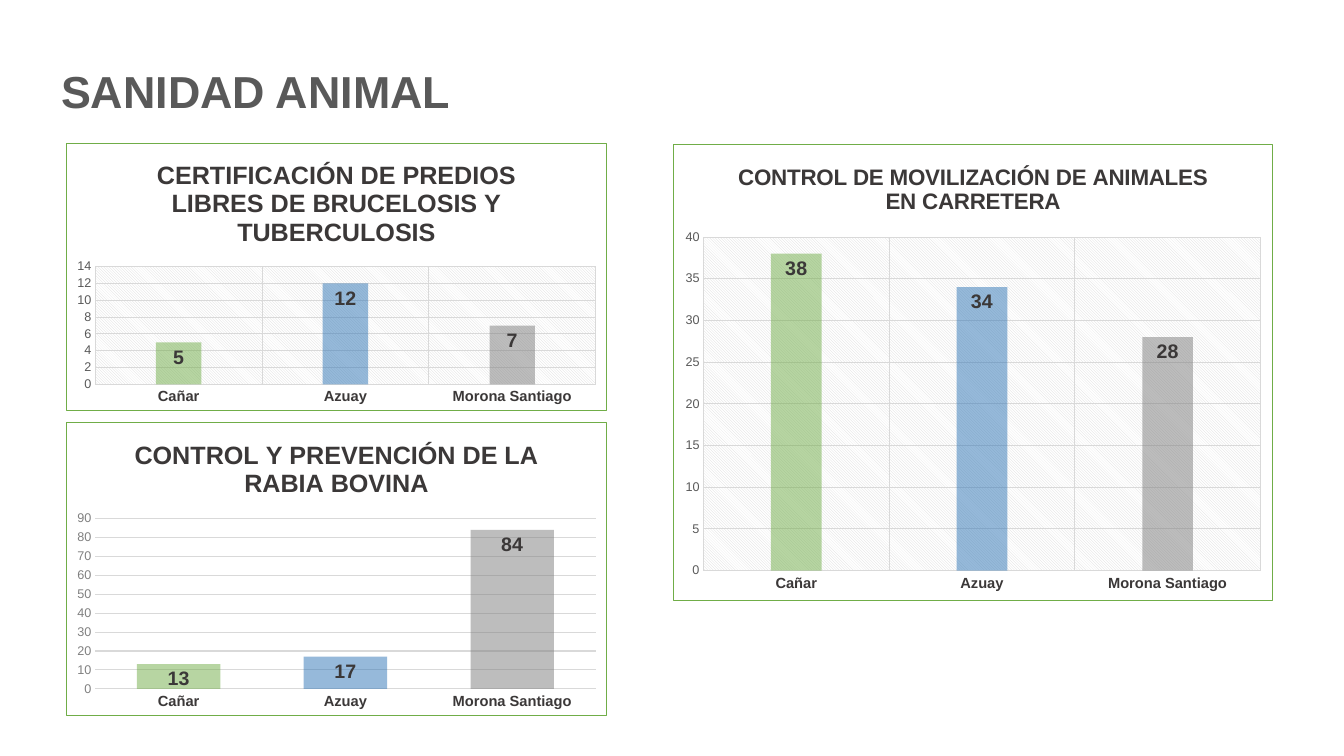
import pptx
import pptx.chart.data
import pptx.dml.color
import pptx.enum.chart
import pptx.enum.text
import pptx.oxml
import pptx.oxml.ns
import pptx.util

PX = 914400 / 100.8
FONT = "Arial"
COLORS = {
    "title": "595959",
    "dark": "3B3838",
    "tick": "595959",
    "light tick": "808080",
    "grid": "D9D9D9",
    "border": "70AD47",
    "white": "FFFFFF",
}
PROVINCES = {"Cañar": "70AD47", "Azuay": "2E75B6", "Morona Santiago": "7C7C7C"}
OPACITY = 50
NAMESPACE = pptx.oxml.ns.nsdecls("c", "a")


def px(length):
    return pptx.util.Emu(round(length * PX))


def rgb(name):
    return pptx.dml.color.RGBColor.from_string(COLORS.get(name, name))


def style_font(font, size, color, bold=False):
    font.name = FONT
    font.size = pptx.util.Pt(size)
    font.bold = bold
    font.color.rgb = rgb(color)


def style_line(line, color):
    line.color.rgb = rgb(color)
    line.width = pptx.util.Pt(0.75)


def frame_chart(chart):
    """Give the chart area its white fill and green border."""
    properties = pptx.oxml.parse_xml(
        f'<c:spPr {NAMESPACE}><a:solidFill><a:srgbClr val="{COLORS["white"]}"/></a:solidFill>'
        f'<a:ln w="9525"><a:solidFill><a:srgbClr val="{COLORS["border"]}"/></a:solidFill></a:ln>'
        "</c:spPr>"
    )
    chart.element.find(pptx.oxml.ns.qn("c:chart")).addnext(properties)


def hatch_plot_area(chart):
    properties = pptx.oxml.parse_xml(
        f'<c:spPr {NAMESPACE}><a:pattFill prst="ltDnDiag">'
        f'<a:fgClr><a:srgbClr val="{COLORS["grid"]}"/></a:fgClr>'
        f'<a:bgClr><a:srgbClr val="{COLORS["white"]}"/></a:bgClr>'
        "</a:pattFill><a:ln><a:noFill/></a:ln></c:spPr>"
    )
    chart.element.find(".//" + pptx.oxml.ns.qn("c:plotArea")).append(properties)


def style_axes(chart, maximum, step, tick_color, hatched):
    category_axis, value_axis = chart.category_axis, chart.value_axis
    for axis in (category_axis, value_axis):
        axis.major_tick_mark = pptx.enum.chart.XL_TICK_MARK.NONE
        axis.minor_tick_mark = pptx.enum.chart.XL_TICK_MARK.NONE
    style_font(category_axis.tick_labels.font, 10.5, "dark", bold=True)
    style_line(category_axis.format.line, "grid")
    category_axis.has_major_gridlines = hatched
    if hatched:
        style_line(category_axis.major_gridlines.format.line, "grid")
    style_font(value_axis.tick_labels.font, 9, tick_color)
    value_axis.format.line.fill.background()
    style_line(value_axis.major_gridlines.format.line, "grid")
    value_axis.minimum_scale = 0
    value_axis.maximum_scale = maximum
    value_axis.major_unit = step


def style_bars(plot, gap, overlap):
    plot.gap_width = gap
    plot.overlap = overlap
    plot.vary_by_categories = False
    series = plot.series[0]
    series.invert_if_negative = False
    for index, color in enumerate(PROVINCES.values()):
        fill = series.points[index].format.fill
        fill.solid()
        fill.fore_color.rgb = rgb(color)
    for color in series._element.iterfind(".//" + pptx.oxml.ns.qn("a:srgbClr")):
        color.append(pptx.oxml.parse_xml(f'<a:alpha {NAMESPACE} val="{OPACITY * 1000}"/>'))
    labels = series.data_labels
    labels.show_value = True
    labels.position = pptx.enum.chart.XL_LABEL_POSITION.INSIDE_END
    style_font(labels.font, 14, "dark", bold=True)


def add_province_chart(slide, box, title, values, maximum, step,
                       title_size=18, hatched=True):
    data = pptx.chart.data.CategoryChartData()
    data.categories = list(PROVINCES)
    data.add_series("Series 1", values)
    chart = slide.shapes.add_chart(
        pptx.enum.chart.XL_CHART_TYPE.COLUMN_CLUSTERED, *map(px, box), data
    ).chart
    chart.font.name = FONT
    chart.font.size = pptx.util.Pt(10)
    chart.has_legend = False
    chart.has_title = True
    chart.chart_title.include_in_layout = False
    chart.chart_title.text_frame.text = title
    style_font(chart.chart_title.text_frame.paragraphs[0].font, title_size, "dark", bold=True)
    frame_chart(chart)
    if hatched:
        hatch_plot_area(chart)
        style_axes(chart, maximum, step, "tick", hatched)
        style_bars(chart.plots[0], 267, -43)
    else:
        style_axes(chart, maximum, step, "light tick", hatched)
        style_bars(chart.plots[0], 100, -24)


def place_title(slide, box, text):
    title = slide.shapes.title
    title.left, title.top, title.width, title.height = map(px, box)
    frame = title.text_frame
    frame.text = text
    frame.word_wrap = True
    frame.vertical_anchor = pptx.enum.text.MSO_ANCHOR.TOP
    paragraph = frame.paragraphs[0]
    paragraph.alignment = pptx.enum.text.PP_ALIGN.LEFT
    style_font(paragraph.font, 32, "title", bold=True)


def build_animal_health_slide(presentation):
    slide = presentation.slides.add_slide(presentation.slide_layouts[5])
    place_title(slide, (51, 59, 839, 65), "SANIDAD ANIMAL")
    add_province_chart(
        slide, (66, 143, 541, 268),
        "CERTIFICACIÓN DE PREDIOS LIBRES DE BRUCELOSIS Y TUBERCULOSIS",
        (5, 12, 7), maximum=14, step=2,
    )
    add_province_chart(
        slide, (66, 422, 541, 294),
        "CONTROL Y PREVENCIÓN DE LA RABIA BOVINA",
        (13, 17, 84), maximum=90, step=10, hatched=False,
    )
    add_province_chart(
        slide, (673, 144, 600, 457),
        "CONTROL DE MOVILIZACIÓN DE ANIMALES EN CARRETERA",
        (38, 34, 28), maximum=40, step=5, title_size=16,
    )


def main():
    presentation = pptx.Presentation()
    presentation.slide_width = px(1344)
    presentation.slide_height = px(756)
    build_animal_health_slide(presentation)
    presentation.save("out.pptx")


if __name__ == "__main__":
    main()
